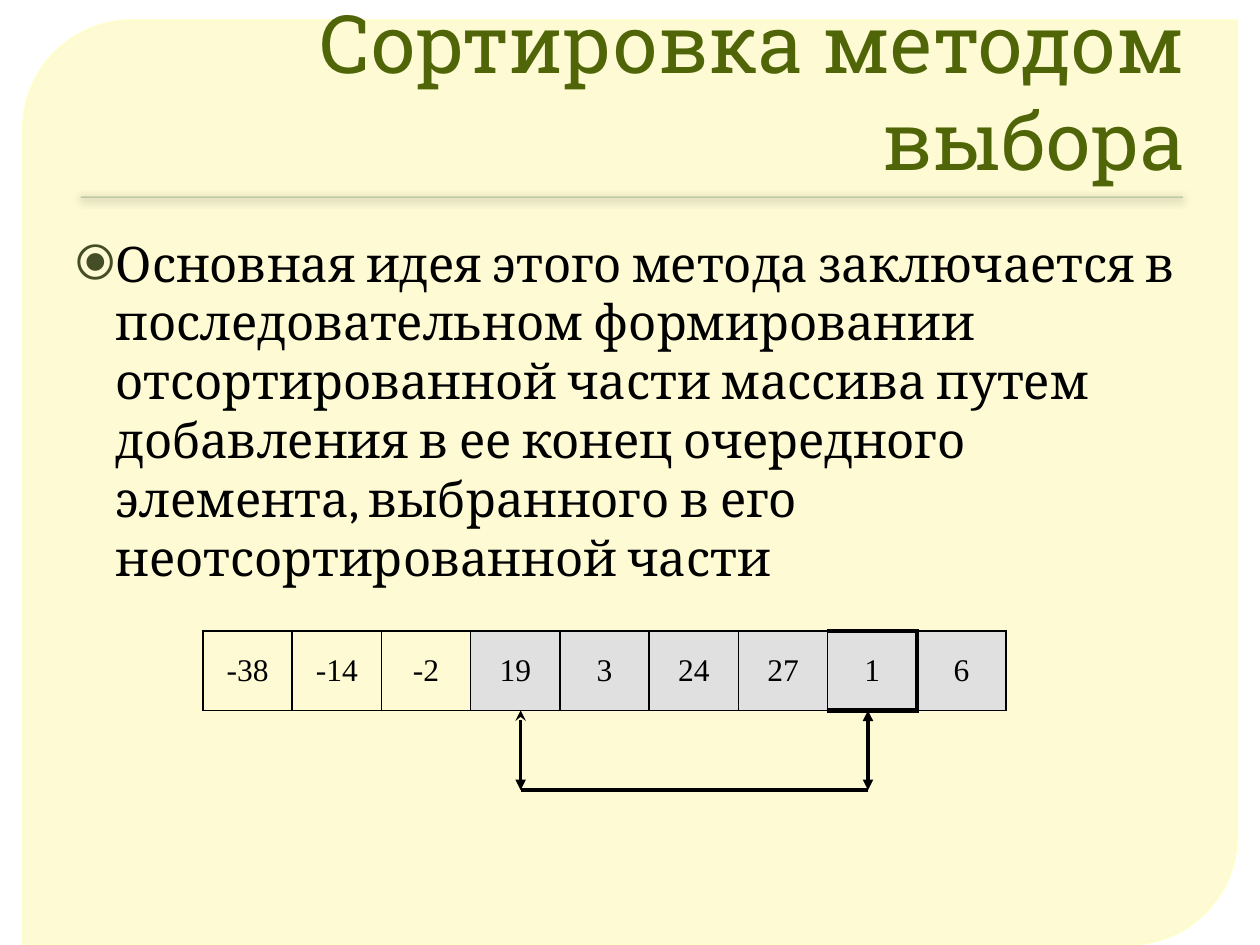
"""Build a slide that explains selection sort with a marked array."""
from lxml import etree
from pptx import Presentation, util as u
from pptx.dml.color import RGBColor
from pptx.enum import shapes, text
from pptx.oxml.ns import qn

Pt = u.Pt
CREAM = RGBColor(0xFC, 0xF8, 0xBD)
PALE = RGBColor(0xFF, 0xFF, 0xC5)
SAGE = RGBColor(0xA5, 0xB5, 0x92)
GREEN = RGBColor(0x50, 0x65, 0x08)
OLIVE = RGBColor(0x44, 0x4D, 0x26)
GREY = RGBColor(0xE0, 0xE0, 0xE0)
BLACK = RGBColor(0, 0, 0)

TITLE = "Сортировка методом выбора"
IDEA = ("Основная идея этого метода заключается в последовательном формировании "
        "отсортированной части массива путем добавления в ее конец очередного "
        "элемента, выбранного в его неотсортированной части")
VALUES = [-38, -14, -2, 19, 3, 24, 27, 1, 6]
SORTED_COUNT = 3
MINIMUM = 7
CELL_W, ROW_H = 51, 45.5


def sub(parent, tag, **attrs):
    """Append an XML child and return it."""
    child = etree.SubElement(parent, qn(tag))
    for name, value in attrs.items():
        child.set(name, str(value))
    return child


def set_alpha(parent, percent):
    """Make the solid colour inside parent translucent."""
    sub(parent.find(qn("a:solidFill"))[0], "a:alpha", val=percent * 1000)


def add_backdrop(slide, kind, box, color, position):
    """Add a filled shape behind the placeholders."""
    sp = slide.shapes.add_shape(kind, *map(Pt, box))
    sp.shadow.inherit = False
    sp.fill.solid()
    sp.fill.fore_color.rgb = color
    sp.line.fill.background()
    slide.shapes._spTree.insert(position, sp._element)
    return sp


def add_panel(slide):
    """Add the cream panel with two rounded corners."""
    kind = shapes.MSO_SHAPE.ROUND_2_DIAG_RECTANGLE
    sp = add_backdrop(slide, kind, (13, 11.5, 694, 528.5), CREAM, 2)
    sp.adjustments[0], sp.adjustments[1] = 0.118, 0
    sp.line.color.rgb = PALE
    sp.line.width = Pt(0.87)
    set_alpha(sp._element.spPr, 65)
    set_alpha(sp.line._get_or_add_ln(), 88)


def add_rule(slide):
    """Add the thin shaded rule under the title."""
    kind = shapes.MSO_SHAPE.RECTANGLE
    sp = add_backdrop(slide, kind, (46, 112.3, 630, 0.72), SAGE, 3)
    effects = sp._element.spPr.find(qn("a:effectLst"))
    shadow = sub(effects, "a:outerShdw", blurRad=Pt(5), dist=Pt(1), dir=5400000)
    sub(sub(shadow, "a:srgbClr", val=BLACK), "a:alpha", val=75000)


def fill_placeholder(sp, box, content, anchor):
    """Place a placeholder, fill it and return its paragraph."""
    sp.left, sp.top, sp.width, sp.height = map(Pt, box)
    tf = sp.text_frame
    tf.text = content
    tf.auto_size = text.MSO_AUTO_SIZE.NONE
    tf.vertical_anchor = anchor
    p = tf.paragraphs[0]
    p.space_before = Pt(0)
    return p


def set_font(p, name, size, color):
    """Set the font of a paragraph."""
    p.font.name, p.font.size = name, Pt(size)
    p.font.color.rgb = color


def add_bullet(p, char, color, indent):
    """Give a paragraph a coloured hanging bullet."""
    pPr = p._p.get_or_add_pPr()
    pPr.set("marL", str(Pt(indent)))
    pPr.set("indent", str(Pt(-indent)))
    sub(sub(pPr, "a:buClr"), "a:srgbClr", val=color)
    sub(pPr, "a:buChar", char=char)


def set_borders(cell, widths):
    """Draw black borders of the given left, right, top and bottom widths."""
    tcPr = cell._tc.get_or_add_tcPr()
    for i, (side, width) in enumerate(zip("LRTB", widths)):
        ln = sub(tcPr, f"a:ln{side}", w=Pt(width))
        sub(sub(ln, "a:solidFill"), "a:srgbClr", val=BLACK)
        tcPr.insert(i, ln)


def add_array(slide, left, top):
    """Add the array as a one-row table with the minimum framed."""
    n = len(VALUES)
    table = slide.shapes.add_table(1, n, Pt(left), Pt(top), Pt(CELL_W * n), Pt(ROW_H)).table
    table.first_row = table.horz_banding = False
    widths = {MINIMUM: (1, 3, 3, 3), MINIMUM + 1: (3, 1, 1, 1)}
    for i, value in enumerate(VALUES):
        table.columns[i].width = Pt(CELL_W)
        cell = table.cell(0, i)
        cell.margin_left = cell.margin_right = Pt(5)
        cell.margin_top = cell.margin_bottom = 0
        cell.vertical_anchor = text.MSO_ANCHOR.MIDDLE
        if i < SORTED_COUNT:
            cell.fill.background()
        else:
            cell.fill.solid()
            cell.fill.fore_color.rgb = GREY
        set_borders(cell, widths.get(i, (1, 1, 1, 1)))
        cell.text = str(value)
        p = cell.text_frame.paragraphs[0]
        p.alignment = text.PP_ALIGN.CENTER
        set_font(p, "Times New Roman", 18, BLACK)


def add_line(group, start, end, head="none", tail="none"):
    """Add a black line with optional arrowheads."""
    line = group.shapes.add_connector(shapes.MSO_CONNECTOR.STRAIGHT, *map(Pt, start + end))
    line.line.color.rgb = BLACK
    line.line.width = Pt(2)
    ln = line.line._get_or_add_ln()
    sub(ln, "a:headEnd", type=head)
    sub(ln, "a:tailEnd", type=tail)
    sub(line._element.spPr, "a:effectLst")


def add_swap(slide, left, right, top, bottom):
    """Add the bracket that marks the two swapped elements."""
    group = slide.shapes.add_group_shape()
    add_line(group, (left, bottom), (left, top), "triangle", "stealth")
    add_line(group, (left, bottom), (right, bottom))
    add_line(group, (right, bottom), (right, top), "triangle", "triangle")


def main():
    """Build and save the slide."""
    prs = Presentation()
    prs.slide_width, prs.slide_height = Pt(720), Pt(540)
    slide = prs.slides.add_slide(prs.slide_layouts[1])
    add_panel(slide)
    add_rule(slide)

    p = fill_placeholder(slide.shapes.title, (36, 20, 648, 90), TITLE, text.MSO_ANCHOR.BOTTOM)
    p.alignment = text.PP_ALIGN.RIGHT
    set_font(p, "Roboto Slab", 46, GREEN)

    p = fill_placeholder(slide.placeholders[1], (36, 129.6, 648, 356.4), IDEA, text.MSO_ANCHOR.TOP)
    add_bullet(p, "⦿", OLIVE, 23)
    set_font(p, "Cambria", 28, BLACK)

    add_array(slide, 116, 360.5)
    add_swap(slide, 297.5, 496, 406, 451.5)
    prs.save("out.pptx")


if __name__ == "__main__":
    main()
